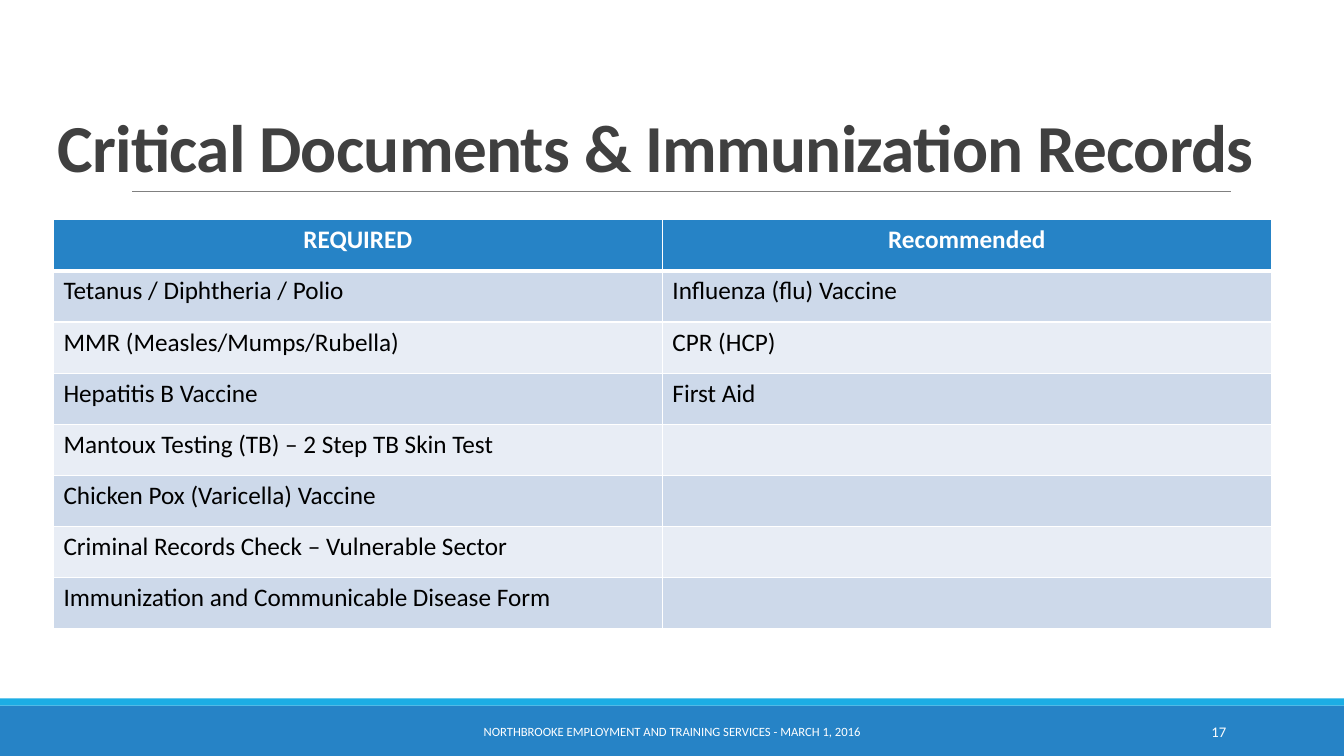
"""Build the slide of required and recommended immunization records."""
import pptx
import pptx.dml.color
import pptx.enum.shapes
import pptx.enum.text
import pptx.oxml.ns
import pptx.util
from lxml import etree

Inches = pptx.util.Inches
Pt = pptx.util.Pt
RGBColor = pptx.dml.color.RGBColor
ALIGN = pptx.enum.text.PP_ALIGN
ANCHOR = pptx.enum.text.MSO_ANCHOR
qn = pptx.oxml.ns.qn

WHITE = RGBColor(0xFF, 0xFF, 0xFF)
BLACK = RGBColor(0, 0, 0)
DARK_GRAY = RGBColor(0x40, 0x40, 0x40)
RULE_GRAY = RGBColor(0x80, 0x80, 0x80)
BLUE = RGBColor(0x26, 0x83, 0xC6)
CYAN = RGBColor(0x1C, 0xAD, 0xE4)
BANDS = [RGBColor(0xE8, 0xED, 0xF5), RGBColor(0xCD, 0xD9, 0xEA)]

WIDTH, HEIGHT = 13.33, 7.5
FOOTER_TOP, STRIPE_HEIGHT = 7, 0.07
TABLE_LEFT, TABLE_TOP, TABLE_WIDTH, TABLE_HEIGHT = 0.53, 2.18, 12.08, 4.06

RECORDS = [
    ("REQUIRED", "Recommended"),
    ("Tetanus / Diphtheria / Polio", "Influenza (flu) Vaccine"),
    ("MMR (Measles/Mumps/Rubella)", "CPR (HCP)"),
    ("Hepatitis B Vaccine", "First Aid"),
    ("Mantoux Testing (TB) – 2 Step TB Skin Test", ""),
    ("Chicken Pox (Varicella) Vaccine", ""),
    ("Criminal Records Check – Vulnerable Sector", ""),
    ("Immunization and Communicable Disease Form", ""),
]


def write(paragraph, text, size, color, bold=False, align=ALIGN.LEFT):
    paragraph.alignment = align
    run = paragraph.add_run()
    run.text = text
    run.font.name = "Calibri"
    run.font.size = Pt(size)
    run.font.bold = bold
    run.font.color.rgb = color
    return run


def add_text(slide, box, anchor, *style):
    frame = slide.shapes.add_textbox(*map(Inches, box)).text_frame
    frame.word_wrap = True
    frame.vertical_anchor = anchor
    return write(frame.paragraphs[0], *style)


presentation = pptx.Presentation()
presentation.slide_width = Inches(WIDTH)
presentation.slide_height = Inches(HEIGHT)
slide = presentation.slides.add_slide(presentation.slide_layouts[6])

for top, height, color in [
    (FOOTER_TOP, HEIGHT - FOOTER_TOP, BLUE),
    (FOOTER_TOP - STRIPE_HEIGHT, STRIPE_HEIGHT, CYAN),
]:
    band = slide.shapes.add_shape(
        pptx.enum.shapes.MSO_SHAPE.RECTANGLE, 0, Inches(top), Inches(WIDTH), Inches(height)
    )
    band.shadow.inherit = False
    band.fill.solid()
    band.fill.fore_color.rgb = color
    band.line.fill.background()

title_rule = slide.shapes.add_connector(
    pptx.enum.shapes.MSO_CONNECTOR.STRAIGHT, *map(Inches, (1.31, 1.9, 12.21, 1.9))
)
title_rule.line.color.rgb = RULE_GRAY
title_rule.line.width = Pt(0.5)
etree.SubElement(title_rule._element.spPr, qn("a:effectLst"))

title = add_text(
    slide, (0.47, 0.31, 12.19, 1.59), ANCHOR.BOTTOM,
    "Critical Documents & Immunization Records", 48, DARK_GRAY, True,
)
title.font._element.set("spc", "-50")
title_paragraph = slide.shapes[-1].text_frame.paragraphs[0]
title_paragraph.line_spacing = 0.85

row_count, column_count = len(RECORDS), len(RECORDS[0])
table = slide.shapes.add_table(
    row_count, column_count,
    *map(Inches, (TABLE_LEFT, TABLE_TOP, TABLE_WIDTH, TABLE_HEIGHT)),
).table
for row_index, record in enumerate(RECORDS):
    header = row_index == 0
    table.rows[row_index].height = Inches(TABLE_HEIGHT / row_count)
    edges = {
        "a:lnL": 1,
        "a:lnR": 1,
        "a:lnT": 3 if row_index == 1 else 1,
        "a:lnB": 3 if header else 1,
    }
    for column_index, text in enumerate(record):
        cell = table.cell(row_index, column_index)
        properties = cell._tc.get_or_add_tcPr()
        for tag, points in edges.items():
            edge = etree.SubElement(properties, qn(tag), w=str(Pt(points)))
            fill = etree.SubElement(edge, qn("a:solidFill"))
            etree.SubElement(fill, qn("a:srgbClr"), val=str(WHITE))
        cell.fill.solid()
        cell.fill.fore_color.rgb = BLUE if header else BANDS[row_index % 2]
        if text:
            write(
                cell.text_frame.paragraphs[0], text, 18,
                WHITE if header else BLACK, header,
                ALIGN.CENTER if header else ALIGN.LEFT,
            )

add_text(
    slide, (10.83, 7.06, 1.43, 0.4), ANCHOR.MIDDLE,
    "17", 10.5, WHITE, False, ALIGN.RIGHT,
)
add_text(
    slide, (4.03, 7.06, 5.27, 0.4), ANCHOR.MIDDLE,
    "NORTHBROOKE EMPLOYMENT AND TRAINING SERVICES - MARCH 1, 2016",
    9, WHITE, False, ALIGN.CENTER,
)

presentation.save("out.pptx")
